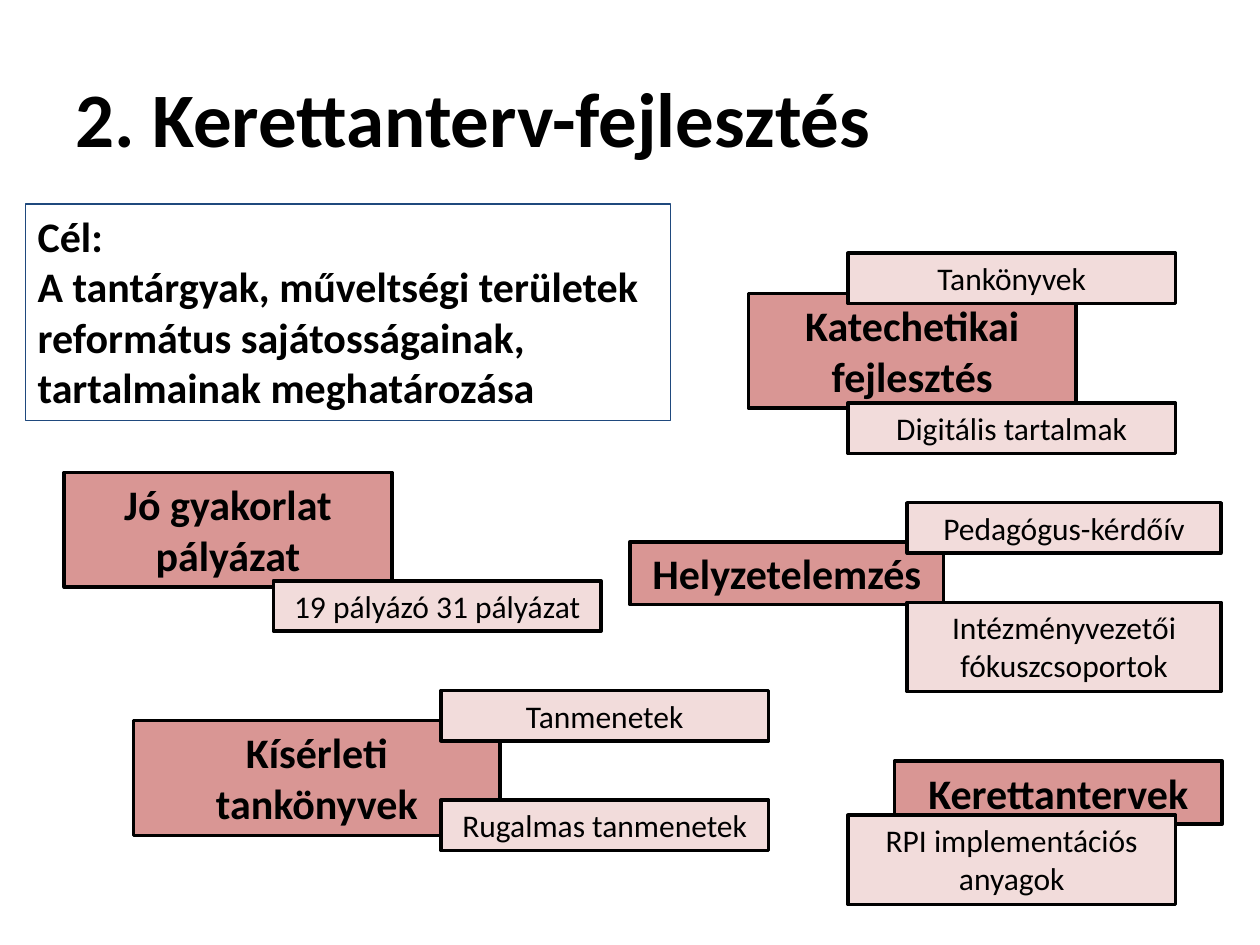
from pptx import Presentation
from pptx.dml.color import RGBColor
from pptx.enum.shapes import MSO_SHAPE
from pptx.enum.text import MSO_ANCHOR, MSO_AUTO_SIZE, PP_ALIGN
from pptx.util import Inches, Pt

RECT = MSO_SHAPE.RECTANGLE
TOP, MIDDLE = MSO_ANCHOR.TOP, MSO_ANCHOR.MIDDLE
LEFT, CENTER = PP_ALIGN.LEFT, PP_ALIGN.CENTER
GROW = MSO_AUTO_SIZE.SHAPE_TO_FIT_TEXT

FONT = "Calibri"
BLACK, ROSE, PINK, NAVY = "000000", "D99694", "F2DCDB", "1F497D"
WIDE = 2.6      # usual box width
SLIM = 2.49     # box width in the survey group
LOW = 0.4       # height of one 18 pt line
TALL = 0.71     # height of two 18 pt lines
HEAD = 0.5      # height of one 24 pt line
BIG = 0.91      # height of two 24 pt lines

# Each group: a topic box, then its detail boxes (text, left, top, width, height)
GROUPS = [
    [("Katechetikai fejlesztés", 5.94, 2.33, WIDE, BIG),
     ("Tankönyvek", 6.73, 2.01, WIDE, LOW),
     ("Digitális tartalmak", 6.73, 3.2, WIDE, LOW)],
    [("Kísérleti tankönyvek", 1.06, 5.72, 2.91, BIG),
     ("Tanmenetek", 3.5, 5.48, WIDE, LOW),
     ("Rugalmas tanmenetek", 3.5, 6.35, WIDE, LOW)],
    [("Helyzetelemzés", 5, 4.3, SLIM, HEAD),
     ("Intézményvezetői fókuszcsoportok", 7.2, 4.78, SLIM, TALL),
     ("Pedagógus-kérdőív", 7.2, 3.99, SLIM, LOW)],
    [("Jó gyakorlat pályázat", 0.51, 3.75, WIDE, BIG),
     ("19 pályázó 31 pályázat", 2.17, 4.61, WIDE, LOW)],
    [("Kerettantervek", 7.1, 6.04, WIDE, HEAD),
     ("RPI implementációs anyagok", 6.73, 6.47, WIDE, TALL)],
]
GOAL = [
    "Cél:",
    "A tantárgyak, műveltségi területek",
    "református sajátosságainak,",
    "tartalmainak meghatározása",
]


def paint(hue):
    return RGBColor.from_string(hue)


def write(shape, lines, size, bold, align, anchor=TOP):
    frame = shape.text_frame
    frame.word_wrap = True
    frame.vertical_anchor = anchor
    frame.text = "\n".join(lines)
    for para in frame.paragraphs:
        para.alignment = align
        font = para.font
        font.name, font.size, font.bold = FONT, Pt(size), bold
        font.color.rgb = paint(BLACK)


def box(parent, place, lines, size, bold, align, fill, line, width):
    shape = parent.add_shape(RECT, *map(Inches, place))
    shape.shadow.inherit = False
    if fill:
        shape.fill.solid()
        shape.fill.fore_color.rgb = paint(fill)
    else:
        shape.fill.background()
    shape.line.color.rgb = paint(line)
    shape.line.width = Pt(width)
    write(shape, lines, size, bold, align)
    shape.text_frame.auto_size = GROW


def cluster(slide, boxes):
    """Group a topic box with the detail boxes that overlap it."""
    group = slide.shapes.add_group_shape().shapes
    for i, (text, *place) in enumerate(boxes):
        size, bold, fill = (18, False, PINK) if i else (24, True, ROSE)
        box(group, place, [text], size, bold, CENTER, fill, BLACK, 2)


def main():
    deck = Presentation()
    deck.slide_width, deck.slide_height = Inches(10), Inches(7.5)
    slide = deck.slides.add_slide(deck.slide_layouts[6])

    title = slide.shapes.add_textbox(*map(Inches, (0.5, 0.3, 9, 1.25)))
    write(title, ["2. Kerettanterv-fejlesztés"], 44, True, LEFT, MIDDLE)

    for boxes in GROUPS[:-1]:
        cluster(slide, boxes)
    box(slide.shapes, (0.2, 1.62, 5.12, 1.72), GOAL, 24, True, LEFT,
        None, NAVY, 0.75)
    cluster(slide, GROUPS[-1])

    deck.save("out.pptx")


if __name__ == "__main__":
    main()
